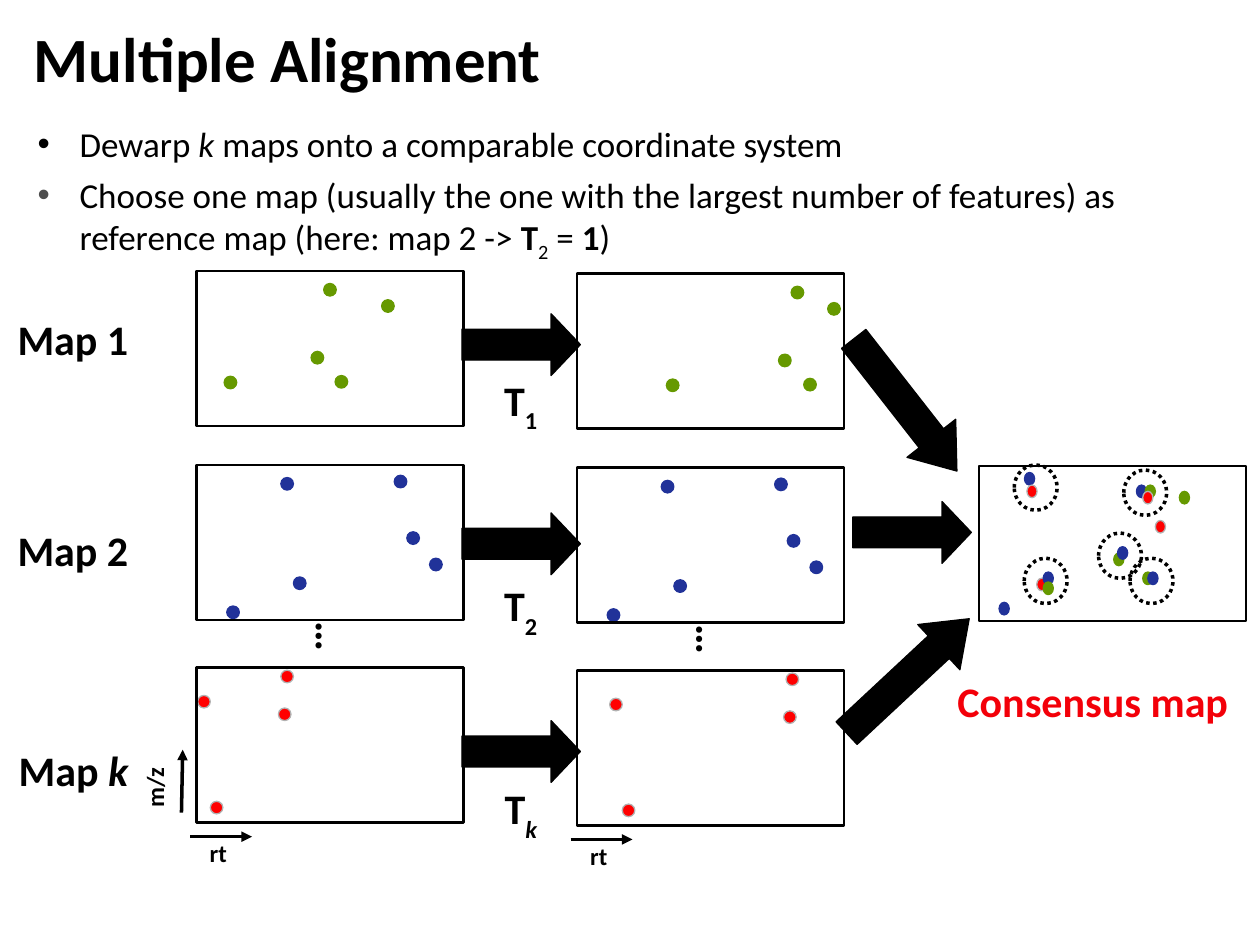
import pptx
import pptx.util
import pptx.dml.color
import pptx.enum.dml
import pptx.enum.shapes
import pptx.enum.text
import pptx.oxml.ns
import lxml.etree

Pt = pptx.util.Pt
RGBColor = pptx.dml.color.RGBColor
Kind = pptx.enum.shapes.MSO_SHAPE
Align = pptx.enum.text.PP_ALIGN
qn = pptx.oxml.ns.qn

BLACK = RGBColor(0, 0, 0)
GRAY = RGBColor(0x4D, 0x4D, 0x4D)
SILVER = RGBColor(0xB2, 0xB2, 0xB2)
GREEN = RGBColor(0x66, 0x99, 0x00)
BLUE = RGBColor(0x21, 0x32, 0x99)
RED = RGBColor(0xFF, 0, 0)
CRIMSON = RGBColor(0xF3, 0, 0x09)

MAP_W, MAP_H = 152.6, 88.6
MAP_X, WARP_X, WARP_Y = 112.3, 217.4, 1.6

# Each row: top, label, label width, index, offsets of label, arrow and T, colour, dots (x, warped x, y)
ROWS = [
    (154.8, "1", 78.5, 20.9, 24.5, 55.4, GREEN,
     [(72.7, 122.4, 7.2), (15.8, 51.1, 60.2), (65.5, 115.2, 46),
      (79.2, 129.6, 59.8), (105.8, 143.3, 16.5)]),
    (265.7, "2", 78.5, 30.2, 27.4, 61.9, BLUE,
     [(x, x, y) for x, y in [(48.2, 7.2), (55.4, 64), (133.2, 53.3),
                             (120.2, 38.2), (113, 5.9), (17.3, 80.6)]]),
    (381.6, "k", 83.5, 40.3, 30.2, 61.9, RED,
     [(0.7, 18.7, 15.8), (46.8, 118.1, 23), (7.9, 25.9, 76.3), (48.2, 119.5, 1.4)]),
]
SHARED = [
    (BLUE, 26, 3.6), (BLUE, 90, 10.8), (RED, 33, 64), (RED, 27.4, 10.8),
    (GREEN, 95, 10.8), (RED, 93.6, 14.4), (BLUE, 36.7, 60.5), (GREEN, 77, 49.7),
    (BLUE, 79.2, 46), (GREEN, 114.5, 14.4), (GREEN, 93.6, 60.5), (BLUE, 96.5, 60.5),
    (BLUE, 11.5, 77.8), (GREEN, 36.7, 66.2), (RED, 100.8, 31),
]
RINGS = [(20.2, -0.7), (82.8, 2.2), (25.9, 52.6), (68.4, 38.2), (86.4, 52.6)]
MERGE = [(-88.5, 102.2, 95.8, 317, 0.673), (-90, -52.6, 95.8, 52, 0.673),
         (-72, 20.2, 67.7, 0, 0.474)]


def add_run(para, text, size, color=BLACK, bold=False, slant=False, base=0):
    """Append one formatted run to a paragraph."""
    run = para.add_run()
    run.text = text
    font = run.font
    font.name, font.size, font.bold, font.italic = "Calibri", Pt(size), bold, slant
    font.color.rgb = color
    if base:
        font._element.set("baseline", str(base * 1000))


def add_label(slide, x, y, w, h, runs, size=24, color=BLACK, align=Align.RIGHT, turn=0):
    """Place a bold, unwrapped label made of (text, slant, base) runs."""
    box = slide.shapes.add_textbox(Pt(x), Pt(y), Pt(w), Pt(h))
    box.rotation = turn
    box.text_frame.word_wrap = False
    para = box.text_frame.paragraphs[0]
    para.alignment = align
    if size < 24:
        para.space_before = Pt(3.5)
    for text, slant, base in runs:
        add_run(para, text, size, color, True, slant, base)


def add_form(slide, kind, x, y, w, h, fill, line, width=0.75):
    """Place a preset shape; a fill of None leaves it open."""
    form = slide.shapes.add_shape(kind, Pt(x), Pt(y), Pt(w), Pt(h))
    form.shadow.inherit = False
    if fill is None:
        form.fill.background()
    else:
        form.fill.solid()
        form.fill.fore_color.rgb = fill
    form.line.color.rgb = line
    form.line.width = Pt(width)
    return form


def add_dot(slide, x, y, w, color):
    """Place one feature dot."""
    add_form(slide, Kind.OVAL, x, y, w, 7.2, color, SILVER if color == RED else color)


def add_frame(slide, x, y):
    """Place the open frame of a map."""
    add_form(slide, Kind.RECTANGLE, x, y, MAP_W, MAP_H, None, BLACK, 1.5)


def add_arrow(slide, x, y, w=67.7, turn=0, head=0.474):
    """Place a black block arrow."""
    arrow = add_form(slide, Kind.RIGHT_ARROW, x, y, w, 35.3, BLACK, BLACK)
    arrow.adjustments[1] = head
    arrow.rotation = turn


def add_axis(slide, x1, y1, x2, y2):
    """Draw a thin axis with an arrowhead at its end."""
    axis = slide.shapes.add_connector(pptx.enum.shapes.MSO_CONNECTOR.STRAIGHT,
                                      Pt(x1), Pt(y1), Pt(x2), Pt(y2))
    axis.line.color.rgb = BLACK
    axis.line.width = Pt(2)
    line = axis.line._get_or_add_ln()
    lxml.etree.SubElement(line, qn("a:tailEnd")).set("type", "triangle")
    lxml.etree.SubElement(axis._element.spPr, qn("a:effectLst"))


def add_time(slide, x, y):
    """Draw the rt axis below the map at the given corner."""
    add_label(slide, x, y + 93.6, 24.5, 24.5, [("rt", False, 0)], 14)
    add_axis(slide, x - 3.6, y + 96.5, x + 31.7, y + 96.5)


def add_mass(slide, x, y):
    """Draw the m/z axis left of the map at the given corner."""
    add_label(slide, x - 42.5, y + 56.2, 37.4, 24.5, [("m/z", False, 0)], 14, turn=270)
    add_axis(slide, x - 8.6, y + 82.8, x - 7.9, y + 46.8)


def add_row(slide, x, y, name, width, label_y, arrow_y, sign_y, color, dots):
    """Draw a map, its transform and the dewarped map."""
    slant = name == "k"
    add_label(slide, x - 31.9 - width, y + label_y, width, 36.7,
              [("Map ", False, 0), (name, slant, 0)])
    for step in range(2):
        left, top = x + step * WARP_X, y + step * WARP_Y
        for dot in dots:
            add_dot(slide, left + dot[step], top + dot[2], 7.2, color)
        add_frame(slide, left, top)
    add_arrow(slide, x + 151.7, y + arrow_y)
    add_label(slide, x + 165, y + sign_y, 36.7, 36.7, [("T", False, 0), (name, slant, -33)])


def add_merged(slide, x, y):
    """Draw the consensus map with its rings, arrows and caption."""
    for color, left, top in SHARED:
        add_dot(slide, x + left, y + top, 5.8, color)
    for left, top in RINGS:
        ring = add_form(slide, Kind.OVAL, x + left, y + top, 24.5, 25.9, None, BLACK, 2)
        ring.line.dash_style = pptx.enum.dml.MSO_LINE.ROUND_DOT
    add_frame(slide, x, y)
    for left, top, width, turn, head in MERGE:
        add_arrow(slide, x + left, y + top, width, turn, head)
    add_label(slide, x - 20.2, y + 115.9, 170.6, 65.5, [("Consensus map", False, 0)],
              color=CRIMSON, align=Align.CENTER)


def add_title(slide, x, y, w, h):
    """Place and format the title."""
    title = slide.shapes.title
    title.left, title.top, title.width, title.height = Pt(x), Pt(y), Pt(w), Pt(h)
    title.text_frame.vertical_anchor = pptx.enum.text.MSO_ANCHOR.MIDDLE
    para = title.text_frame.paragraphs[0]
    para.alignment = Align.LEFT
    add_run(para, "Multiple Alignment", 36, bold=True)


def add_points(slide, x, y, w, h):
    """Place the two bullet points."""
    frame = slide.shapes.add_textbox(Pt(x), Pt(y), Pt(w), Pt(h)).text_frame
    frame.word_wrap = True
    points = [
        (BLACK, [("Dewarp ", {}), ("k", {"slant": True}),
                 (" maps onto a comparable coordinate system", {})]),
        (GRAY, [("Choose one map (usually the one with the largest number of features) "
                 "as reference map (here: map 2 -> ", {}),
                ("T", {"bold": True}), ("2", {"base": -25}), (" = ", {}),
                ("1", {"bold": True}), (")", {})]),
    ]
    for spot, (color, runs) in enumerate(points):
        para = frame.add_paragraph() if spot else frame.paragraphs[0]
        para.space_before = Pt(5.5)
        props = para._p.get_or_add_pPr()
        props.set("marL", str(Pt(24)))
        props.set("indent", str(Pt(-24)))
        tint = lxml.etree.SubElement(props, qn("a:buClr"))
        lxml.etree.SubElement(tint, qn("a:srgbClr")).set("val", str(color))
        lxml.etree.SubElement(props, qn("a:buFont")).set("typeface", "Arial")
        lxml.etree.SubElement(props, qn("a:buChar")).set("char", "•")
        for text, style in runs:
            add_run(para, text, 20, **style)


def main():
    """Build the slide and save it."""
    deck = pptx.Presentation()
    deck.slide_width, deck.slide_height = Pt(720), Pt(540)
    slide = deck.slides.add_slide(deck.slide_layouts[5])
    add_title(slide, 12.2, 5.8, 527.8, 54)
    add_points(slide, 14.4, 66.2, 692, 85)
    for top, *parts in ROWS:
        add_row(slide, MAP_X, top, *parts)
    for step in range(2):
        left = MAP_X + step * WARP_X
        add_label(slide, left + 61.9, ROWS[1][0] + 79.9 + step * WARP_Y, 31.7, 36,
                  [("…", False, 0)], turn=90)
        add_time(slide, left, ROWS[2][0] + step * WARP_Y)
    add_mass(slide, MAP_X, ROWS[2][0])
    add_merged(slide, 559.4, 266.4)
    deck.save("out.pptx")


if __name__ == "__main__":
    main()
